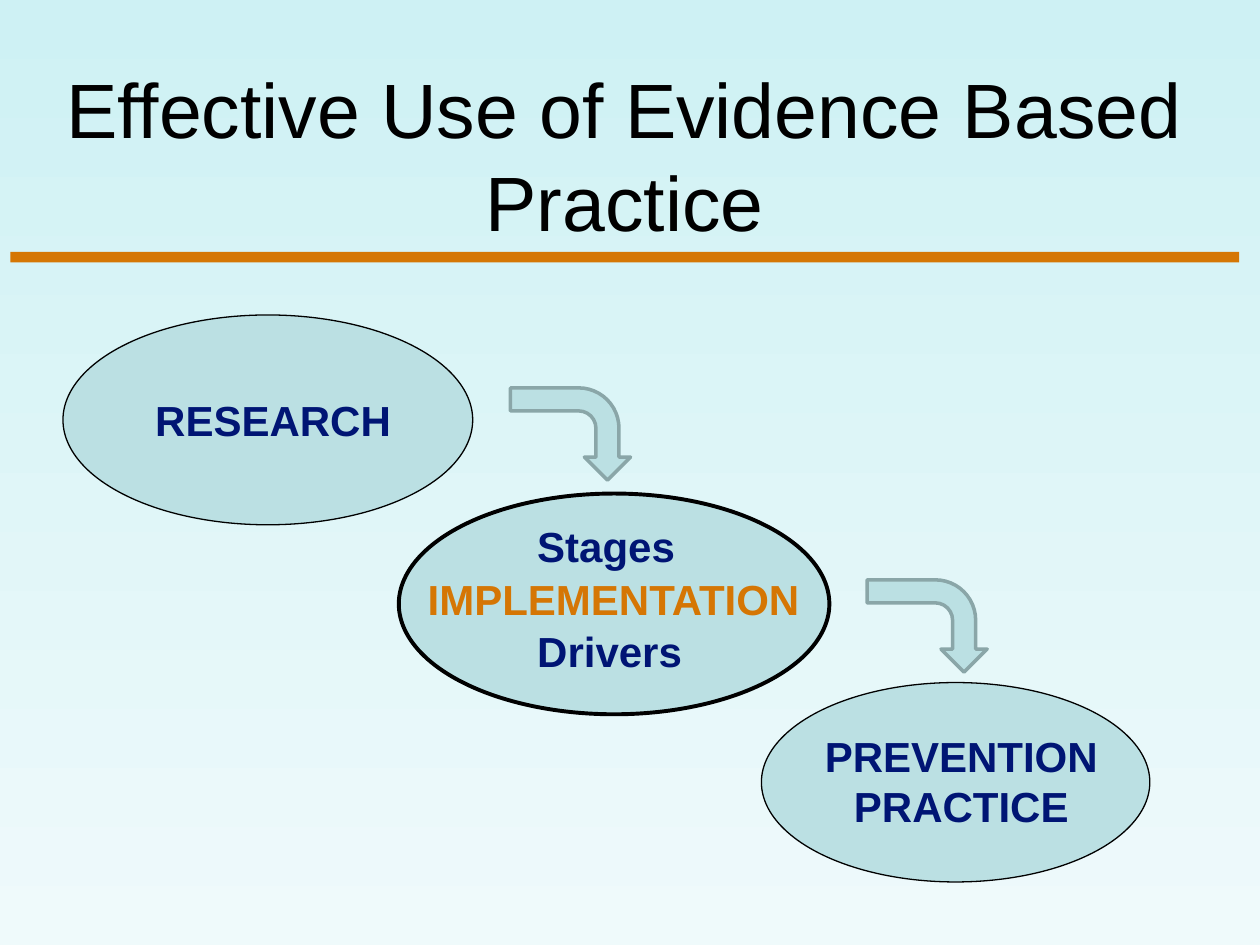
"""Builds the slide on effective use of evidence based practice."""
from dataclasses import dataclass

from pptx import Presentation
from pptx import util as u
from pptx.dml.color import RGBColor
from pptx.enum import shapes, text


@dataclass(frozen=True)
class Theme:
    """Colours, font and type sizes of the slide."""
    font: str = "Arial"
    title_size: int = 44
    label_size: int = 24
    black: str = "000000"
    navy: str = "001574"
    orange: str = "D57604"
    teal: str = "BBE0E3"
    teal_edge: str = "8AA6A8"
    sky_top: str = "CEF1F4"
    sky_bottom: str = "EFFAFB"


class Board:
    """Draws styled elements on the current slide."""

    def __init__(self, slide, theme):
        """Keep the slide and its theme."""
        self.slide, self.theme = slide, theme

    def background(self):
        """Fill the slide with a gradient from top to bottom."""
        fill = self.slide.background.fill
        fill.gradient()
        fill.gradient_angle = 270
        shades = (self.theme.sky_top, self.theme.sky_bottom)
        for stop, shade in zip(fill.gradient_stops, shades):
            stop.color.rgb = RGBColor.from_string(shade)

    def wording(self, frame, words, size, color, bold, align):
        """Set the words of a frame and format its runs."""
        frame.text = words
        frame.word_wrap = True
        for paragraph in frame.paragraphs:
            paragraph.alignment = align
            for run in paragraph.runs:
                run.font.name = self.theme.font
                run.font.size = u.Pt(size)
                run.font.bold = bold
                run.font.color.rgb = RGBColor.from_string(color)

    def title(self, words, box):
        """Place and format the title placeholder."""
        heading = self.slide.shapes.title
        heading.left, heading.top, heading.width, heading.height = map(u.Cm, box)
        frame = heading.text_frame
        self.wording(frame, words, self.theme.title_size, self.theme.black,
                     False, text.PP_ALIGN.CENTER)
        frame.auto_size = text.MSO_AUTO_SIZE.NONE
        frame.vertical_anchor = text.MSO_ANCHOR.MIDDLE

    def shape(self, kind, box, fill, edge=None, weight=0.75, parent=None):
        """Add a filled preset shape, outlined when an edge colour is given."""
        parent = parent or self.slide
        figure = parent.shapes.add_shape(kind, *map(u.Cm, box))
        figure.shadow.inherit = False
        figure.fill.solid()
        figure.fill.fore_color.rgb = RGBColor.from_string(fill)
        if edge:
            figure.line.color.rgb = RGBColor.from_string(edge)
            figure.line.width = u.Pt(weight)
        else:
            figure.line.fill.background()
        return figure

    def label(self, words, box, color, align=text.PP_ALIGN.CENTER, parent=None):
        """Add a bold text box."""
        parent = parent or self.slide
        frame = parent.shapes.add_textbox(*map(u.Cm, box)).text_frame
        self.wording(frame, words, self.theme.label_size, color, True, align)
        frame.auto_size = text.MSO_AUTO_SIZE.SHAPE_TO_FIT_TEXT

    def node(self, words, oval, box, color, weight=0.75):
        """Add an oval grouped with its label."""
        group = self.slide.shapes.add_group_shape()
        self.shape(shapes.MSO_SHAPE.OVAL, oval, self.theme.teal,
                   self.theme.black, weight, parent=group)
        self.label(words, box, color, parent=group)

    def arrow(self, left, top):
        """Add an arrow that bends downwards."""
        bend = self.shape(shapes.MSO_SHAPE.BENT_ARROW, (left, top, 1.86, 2.42),
                          self.theme.teal, self.theme.teal_edge, 2)
        bend.rotation = 90


def main():
    """Build and save the slide."""
    theme = Theme()
    deck = Presentation()
    deck.slide_width, deck.slide_height = u.Cm(25.4), u.Cm(19.05)
    board = Board(deck.slides.add_slide(deck.slide_layouts[5]), theme)

    board.background()
    board.title("Effective Use of Evidence Based Practice", (0.21, 1.69, 24.77, 2.84))
    board.shape(shapes.MSO_SHAPE.RECTANGLE, (0.21, 5.08, 24.77, 0.21), theme.orange)

    board.node("RESEARCH", (1.27, 6.35, 8.26, 4.23),
               (2.54, 7.83, 5.93, 1.27), theme.navy)
    board.node("PREVENTION\nPRACTICE", (15.35, 13.76, 7.83, 4.02),
               (16.31, 14.6, 6.14, 2.32), theme.navy)
    board.node("IMPLEMENTATION", (8.04, 9.95, 8.68, 4.45),
               (8.28, 11.43, 8.18, 1.27), theme.orange, 2.25)
    for aspect, top in (("Drivers", 12.49), ("Stages", 10.37)):
        board.label(aspect, (10.58, top, 3.81, 1.27), theme.navy, text.PP_ALIGN.LEFT)

    for left, top in ((10.57, 7.54), (17.76, 11.41)):
        board.arrow(left, top)

    deck.save("out.pptx")


if __name__ == "__main__":
    main()
